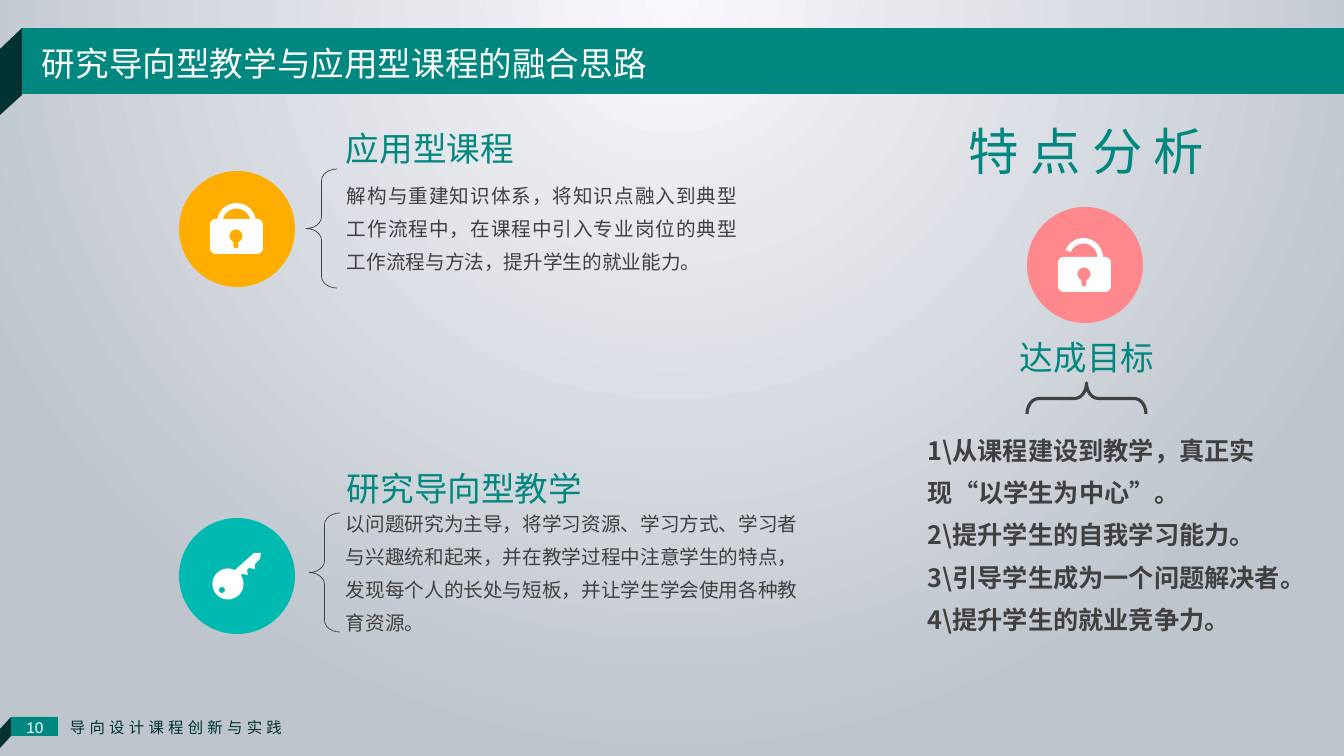
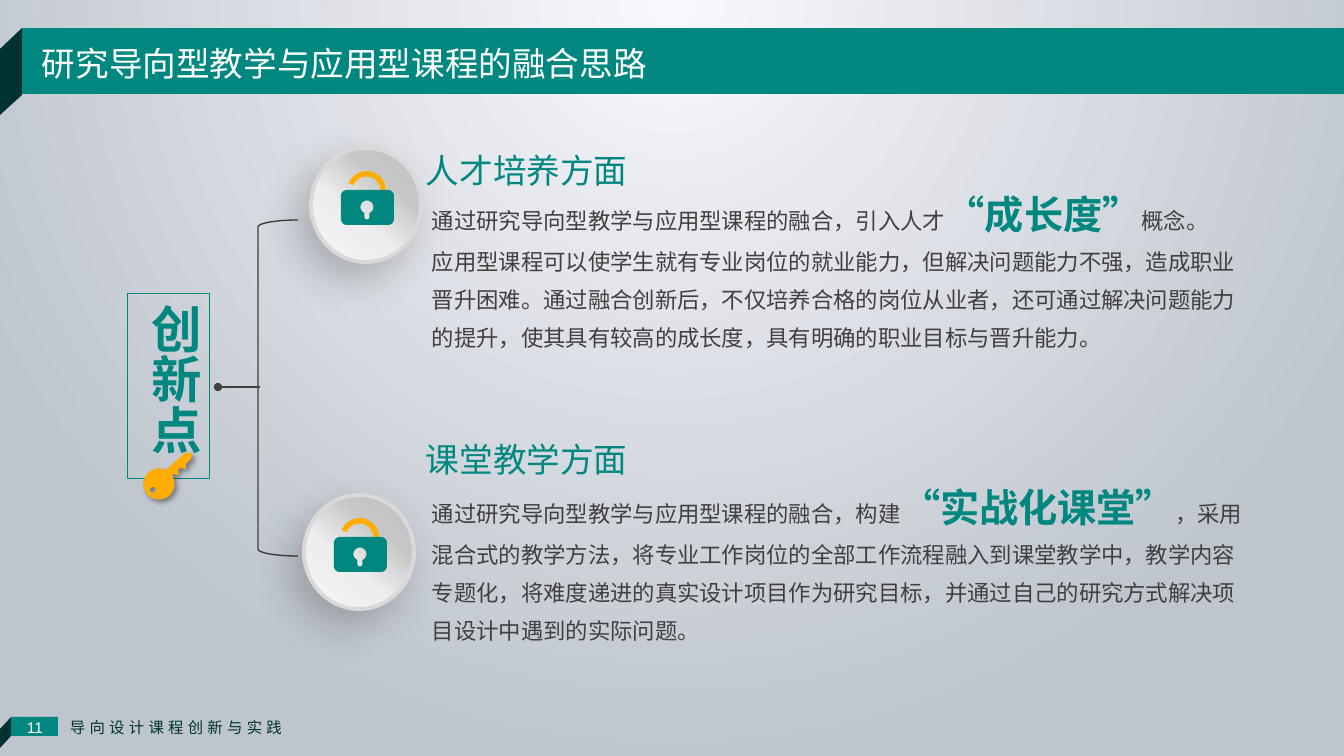
import math

import lxml.etree
import pptx
import pptx.dml.color
import pptx.enum.shapes
import pptx.enum.text
import pptx.oxml.ns
import pptx.util

RGB = pptx.dml.color.RGBColor
TEAL = RGB(0x00, 0x87, 0x80)
DARK_TEAL = RGB(0x00, 0x32, 0x31)
BRIGHT_TEAL = RGB(0x00, 0xB9, 0xB1)
AMBER = RGB(0xFF, 0xAD, 0x00)
PINK = RGB(0xFF, 0x88, 0x8C)
WHITE = RGB(0xFF, 0xFF, 0xFF)
GREY = RGB(0x40, 0x40, 0x40)
RIM = RGB(0xD9, 0xD9, 0xD9)
BACKDROP = [(0, "F9F8FD"), (100, "BEC5CD")]
DISK = [(0, "BFBFBF"), (30, "C6C6C6"), (61, "EEEEEE"), (100, "F5F5F5")]

CJK = "Noto Sans CJK SC"
EMU_PER_PX = 914400 / 100.8
SHAPE = pptx.enum.shapes.MSO_SHAPE
ALIGN = pptx.enum.text.PP_ALIGN
qn = pptx.oxml.ns.qn


def px(length):
    return pptx.util.Emu(round(length * EMU_PER_PX))


def add_xml(parent, tag, **attributes):
    return lxml.etree.SubElement(parent, qn(tag), attributes)


def arc(cx, cy, rx, ry, start, end):
    """Points on an ellipse, clockwise in degrees from the right."""
    steps = max(4, round(abs(end - start) / 8))
    angles = [math.radians(start + (end - start) * i / steps) for i in range(steps + 1)]
    return [(cx + rx * math.cos(a), cy + ry * math.sin(a)) for a in angles]


def set_gradient(fill, root, stops, angle=None):
    """Linear when an angle is given, otherwise a glow from above the top."""
    fill.gradient()
    gradient = next(root.iter(qn("a:gradFill")))
    for child in list(gradient):
        gradient.remove(child)
    stop_list = add_xml(gradient, "a:gsLst")
    for position, colour in stops:
        stop = add_xml(stop_list, "a:gs", pos=str(position * 1000))
        add_xml(stop, "a:srgbClr", val=colour)
    if angle is None:
        glow = add_xml(gradient, "a:path", path="circle")
        add_xml(glow, "a:fillToRect", l="50000", t="-80000", r="50000", b="180000")
    else:
        add_xml(gradient, "a:lin", ang=str(angle * 60000), scaled="0")


def cast_shadow(shape, alpha, blur, distance, angle):
    effects = shape._element.spPr.find(qn("a:effectLst"))
    shadow = add_xml(effects, "a:outerShdw", blurRad=str(blur * 12700),
                     dist=str(distance * 12700), dir=str(angle * 60000),
                     algn="ctr", rotWithShape="0")
    colour = add_xml(shadow, "a:srgbClr", val="000000")
    add_xml(colour, "a:alpha", val=str(alpha * 1000))


class Deck:
    def __init__(self):
        self.prs = pptx.Presentation()
        self.prs.slide_width, self.prs.slide_height = px(1344), px(756)
        master = self.prs.slide_master
        set_gradient(master.background.fill, master._element, BACKDROP)

    def new_slide(self, title, number, footer):
        self.shapes = self.prs.slides.add_slide(self.prs.slide_layouts[6]).shapes
        self.shape(SHAPE.RECTANGLE, (22, 28, 1322, 66), TEAL)
        self.shape(SHAPE.RECTANGLE, (11, 717, 47, 19), TEAL)
        self.outline([[(0, 49), (0, 115), (22, 95), (22, 28)]], DARK_TEAL)
        self.outline([[(0, 729), (0, 748), (11, 736), (11, 717)]], DARK_TEAL)
        self.heading(32, 38, title, WHITE)
        self.text((12, 711, 46, 32), [number], 11, WHITE, font="Arial",
                  align=ALIGN.CENTER, wrap=False, inset=(13, 7))
        self.text((57, 711, 242, 32), [footer], 11, DARK_TEAL, wrap=False,
                  inset=(13, 7), tracking=3)

    def finish(self, shape, fill=None, line=None, width=1):
        shape.shadow.inherit = False
        if fill is None:
            shape.fill.background()
        else:
            shape.fill.solid()
            shape.fill.fore_color.rgb = fill
        if line is None:
            shape.line.fill.background()
        else:
            shape.line.color.rgb = line
            shape.line.width = pptx.util.Pt(width)
        return shape

    def shape(self, kind, box, fill=None, line=None, width=1):
        return self.finish(self.shapes.add_shape(kind, *map(px, box)), fill, line, width)

    def outline(self, contours, fill=None, line=None, at=(0, 0)):
        """Freeform of px contours moved to a place; closed when filled."""
        placed = [[(px(at[0] + x), px(at[1] + y)) for x, y in c] for c in contours]
        builder = self.shapes.build_freeform(*placed[0][0])
        for index, points in enumerate(placed):
            if index:
                builder.move_to(*points[0])
            builder.add_line_segments(points[1:], close=fill is not None)
        return self.finish(builder.convert_to_shape(), fill, line)

    def format_run(self, run, size, colour, bold, font, tracking=0):
        run.font.size = pptx.util.Pt(size)
        run.font.bold = bold
        run.font.color.rgb = colour
        run.font.name = font
        properties = run._r.get_or_add_rPr()
        east_asian = lxml.etree.Element(qn("a:ea"), typeface=CJK)
        properties.find(qn("a:latin")).addnext(east_asian)
        if tracking:
            properties.set("spc", str(tracking * 100))

    def text(self, box, paragraphs, size, colour, bold=False, font=CJK, align=ALIGN.LEFT,
             wrap=True, spacing=None, inset=None, tracking=0, holder=None):
        """A paragraph is a string, or a list of parts whose odd ones are highlighted."""
        holder = holder or self.shapes.add_textbox(*map(px, box))
        frame = holder.text_frame
        frame.word_wrap = wrap
        frame.auto_size = pptx.enum.text.MSO_AUTO_SIZE.SHAPE_TO_FIT_TEXT
        frame.vertical_anchor = pptx.enum.text.MSO_ANCHOR.TOP
        if inset:
            frame.margin_left = frame.margin_right = px(inset[0])
            frame.margin_top = frame.margin_bottom = px(inset[1])
        for index, content in enumerate(paragraphs):
            paragraph = frame.add_paragraph() if index else frame.paragraphs[0]
            paragraph.alignment = align
            if spacing:
                paragraph.line_spacing = spacing
            parts = [content] if isinstance(content, str) else content
            paragraph.text = parts[0]
            for part in parts[1:]:
                paragraph.add_run().text = part
            for position, run in enumerate(paragraph.runs):
                if position % 2:
                    self.format_run(run, 28, TEAL, True, font)
                else:
                    self.format_run(run, size, colour, bold, font, tracking)

    def heading(self, x, y, words, colour=TEAL):
        """One line, in a box with room for every full-width character."""
        width = math.ceil(33.6 * len(words)) + 22
        self.text((x, y, width, 50), [words], 24, colour, wrap=False)

    def body(self, box, paragraphs, size, **style):
        self.text(box, paragraphs, size, GREY, spacing=1.4, **style)

    def vertical_label(self, box, words):
        label = self.shape(SHAPE.RECTANGLE, box, line=TEAL, width=0.75)
        self.text(box, [words], 36, TEAL, bold=True, holder=label)
        label.text_frame._txBody.bodyPr.set("vert", "eaVert")

    def brace(self, box, width=0.5, rotation=0):
        brace = self.shape(SHAPE.LEFT_BRACE, box, line=GREY, width=width)
        brace.adjustments[0] = 0.38
        brace.rotation = rotation

    def circle(self, x, y, fill):
        self.shape(SHAPE.OVAL, (x, y, 116, 116), fill)

    def lock(self, x, y, body, shackle, is_open=True):
        dx, dy, turn = (6, -19, 22.4) if is_open else (7, -16, 0)
        bow = self.shape(SHAPE.BLOCK_ARC, (x + dx, y + dy, 39, 39), shackle)
        bow.adjustments[2] = 0.14
        bow.rotation = turn
        case = (arc(6, 6, 6, 6, 180, 270) + arc(47, 6, 6, 6, 270, 360)
                + arc(47, 29, 6, 6, 0, 90) + arc(6, 29, 6, 6, 90, 180))
        keyhole = arc(26, 17, 6.5, 6.5, 113, 427) + arc(26, 27, 2.5, 2.5, 0, 180)
        self.outline([case, keyhole], body, at=(x, y))

    def key(self, x, y, fill):
        teeth = [(22, 17), (41, 0), (48, 0), (47, 6), (42, 11), (42, 16), (36, 15),
                 (34, 17), (35, 22), (29, 21), (28, 22)]
        bow = arc(15, 31, 15.5, 15.5, -23, 292)
        return self.outline([bow + teeth, arc(9, 37, 3, 3, 0, 360)], fill, at=(x, y))

    def lock_button(self, x, y):
        disk = self.shape(SHAPE.OVAL, (x, y, 110, 114), WHITE, RIM, 2.75)
        set_gradient(disk.fill, disk._element, DISK, 130)
        cast_shadow(disk, 22, 30, 14, 130)
        self.lock(x + 30, y + 42, TEAL, AMBER)

    def dotted_line(self, x1, y1, x2, y2):
        """Line that ends in a dot."""
        line = self.shapes.add_connector(
            pptx.enum.shapes.MSO_CONNECTOR.STRAIGHT, *map(px, (x1, y1, x2, y2)))
        line.line.color.rgb = GREY
        line.line.width = pptx.util.Pt(1)
        add_xml(line.line._get_or_add_ln(), "a:tailEnd", type="oval")
        add_xml(line._element.spPr, "a:effectLst")


def main():
    deck = Deck()
    title, footer = "研究导向型教学与应用型课程的融合思路", "导向设计课程创新与实践"

    deck.new_slide(title, "10", footer)
    deck.heading(336, 123, "应用型课程")
    deck.body((337, 170, 410, 110), [
        "解构与重建知识体系，将知识点融入到典型工作流程中，在课程中引入专业岗位的典型"
        "工作流程与方法，提升学生的就业能力。"], 14, align=ALIGN.JUSTIFY)
    deck.heading(337, 463, "研究导向型教学")
    deck.body((336, 498, 476, 143), [
        "以问题研究为主导，将学习资源、学习方式、学习者与兴趣统和起来，并在教学过程中"
        "注意学生的特点，发现每个人的长处与短板，并让学生学会使用各种教育资源。"], 14)
    deck.text((959, 115, 276, 72), ["特 点 分 析"], 36, TEAL, font="Arial")
    deck.heading(1010, 332, "达成目标")
    deck.body((918, 418, 383, 224), [
        "1\\从课程建设到教学，真正实现“以学生为中心”。",
        "2\\提升学生的自我学习能力。",
        "3\\引导学生成为一个问题解决者。",
        "4\\提升学生的就业竞争力。"], 18, bold=True)
    deck.circle(179, 171, AMBER)
    deck.lock(210, 219, WHITE, WHITE, is_open=False)
    deck.circle(179, 518, BRIGHT_TEAL)
    deck.key(213, 553, WHITE)
    deck.circle(1027, 207, PINK)
    deck.lock(1058, 257, WHITE, WHITE)
    deck.brace((306, 169, 31, 119))
    deck.brace((309, 513, 31, 119))
    deck.brace((1071, 339, 31, 119), width=2.25, rotation=90)

    deck.new_slide(title, "11", footer)
    deck.heading(416, 145, "人才培养方面")
    deck.body((422, 167, 831, 191), [
        ["通过研究导向型教学与应用型课程的融合，引入人才", "“成长度”", "概念。"],
        "应用型课程可以使学生就有专业岗位的就业能力，但解决问题能力不强，造成职业晋升"
        "困难。通过融合创新后，不仅培养合格的岗位从业者，还可通过解决问题能力的提升，"
        "使其具有较高的成长度，具有明确的职业目标与晋升能力。"], 16)
    deck.heading(416, 434, "课堂教学方面")
    deck.body((422, 460, 831, 191), [
        ["通过研究导向型教学与应用型课程的融合，构建", "“实战化课堂”",
         "，采用混合式的教学方法，将专业工作岗位的全部工作流程融入到课堂教学中，教学内容"
         "专题化，将难度递进的真实设计项目作为研究目标，并通过自己的研究方式解决项目设计"
         "中遇到的实际问题。"]], 16)
    deck.outline([arc(298, 549, 40, 7, 90, 180) + arc(298, 227, 40, 7, 180, 270)], line=GREY)
    deck.dotted_line(260, 387, 218, 387)
    deck.lock_button(311, 148)
    deck.lock_button(304, 495)
    deck.vertical_label((128, 294, 82, 185), "创新点")
    cast_shadow(deck.key(144, 453, AMBER), 40, 4, 3, 45)

    deck.prs.save("out.pptx")


if __name__ == "__main__":
    main()
